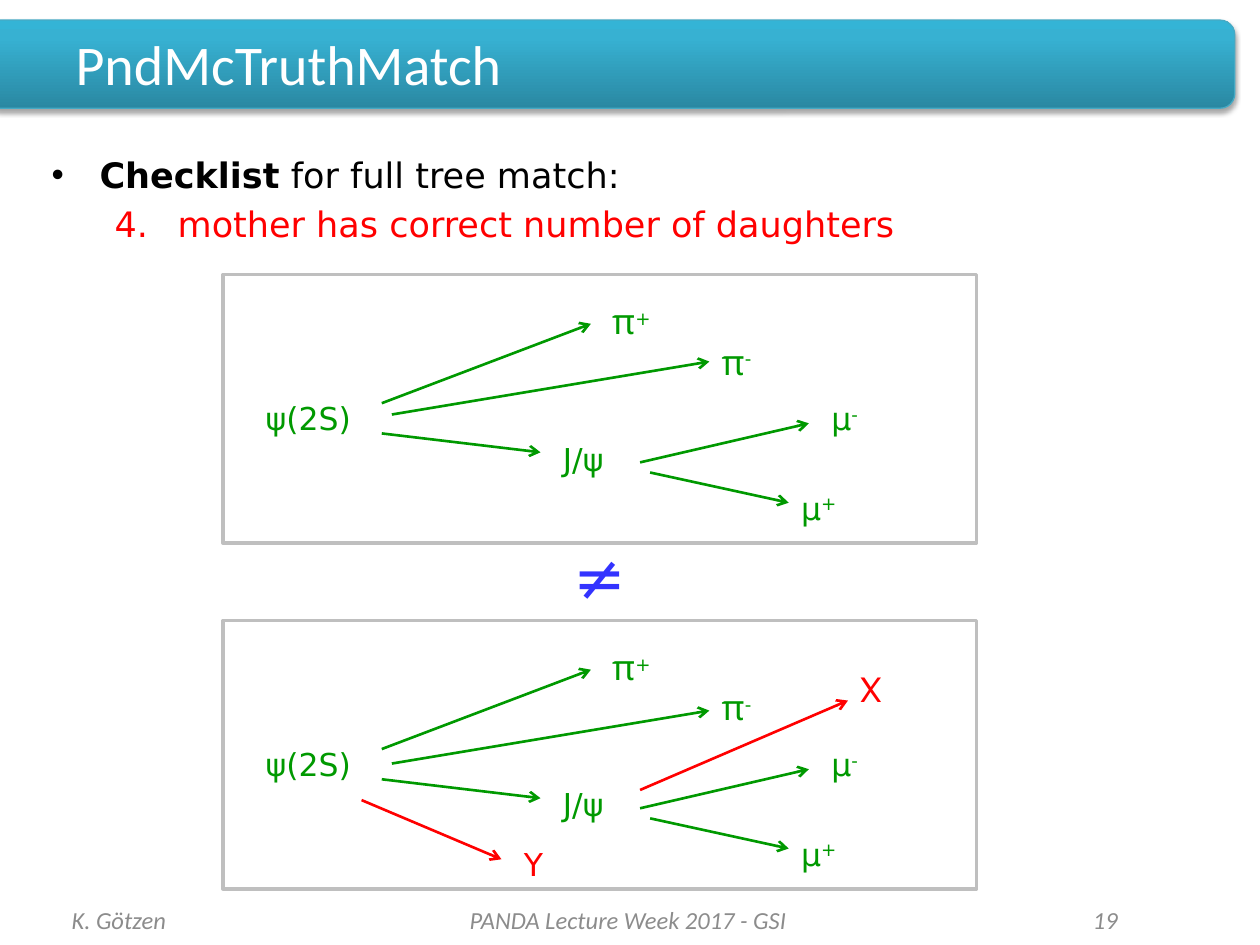
from lxml.etree import SubElement
from pptx import Presentation
from pptx.dml.color import RGBColor
from pptx.enum.shapes import MSO_CONNECTOR, MSO_SHAPE
from pptx.enum.text import MSO_ANCHOR, MSO_AUTO_SIZE, PP_ALIGN
from pptx.oxml import parse_xml
from pptx.oxml.ns import nsdecls, qn
from pptx.util import Inches, Pt

THEME = {
    "white": "FFFFFF", "black": "000000", "grey": "8C8C8C", "frame": "BFBFBF",
    "green": "009900", "red": "FF0000", "blue": "3333FF", "edge": "46AAC5",
    "fade": [(0, "2A88A2"), (80, "37B1D2"), (100, "34B4D6")],
    "title": {"size": Pt(32), "name": "Calibri"},
    "list": {"size": Pt(20), "name": "DejaVu Sans"},
    "foot": {"size": Pt(14), "name": "Calibri", "italic": True},
    "label": {"size": Pt(18), "name": "DejaVu Sans"},
    "large": {"size": Pt(20), "name": "Cabin"},
    "sign": {"size": Pt(36), "name": "DejaVu Sans"},
}


def write(par, text, style, color, **more):
    """Add a run in a theme style and return it."""
    run = par.add_run()
    run.text = text
    for key, value in {**THEME[style], **more}.items():
        setattr(run.font, key, value)
    run.font.color.rgb = RGBColor.from_string(THEME[color])
    return run


def label(x, y, wide, high, text, style, color, power=""):
    """Place a text box that fits its text, with an optional superscript."""
    box = slide.shapes.add_textbox(Inches(x), Inches(y), Inches(wide), Inches(high))
    frame = box.text_frame
    frame.word_wrap = False
    frame.auto_size = MSO_AUTO_SIZE.SHAPE_TO_FIT_TEXT
    par = frame.paragraphs[0]
    write(par, text, style, color)
    if power:
        run = write(par, power, "label", color)
        run.font._element.set("baseline", "30000")


deck = Presentation()
deck.slide_width, deck.slide_height = Inches(10), Inches(7.5)
slide = deck.slides.add_slide(deck.slide_layouts[1])
shapes = slide.shapes
title, body = shapes.title, slide.placeholders[1]

# Banner behind the title
banner = shapes.add_shape(MSO_SHAPE.ROUNDED_RECTANGLE, Inches(-0.12), Inches(0.16),
                          Inches(9.92), Inches(0.7))
banner.line.color.rgb = RGBColor.from_string(THEME["edge"])
banner.line.width = Pt(0.75)
stops = "".join(f'<a:gs pos="{pos * 1000}"><a:srgbClr val="{color}"/></a:gs>'
                for pos, color in THEME["fade"])
props = banner._element.spPr
props.find(qn("a:ln")).addprevious(parse_xml(
    f'<a:gradFill {nsdecls("a")}><a:gsLst>{stops}</a:gsLst>'
    '<a:lin ang="16200000" scaled="0"/></a:gradFill>'))
props.append(parse_xml(
    f'<a:effectLst {nsdecls("a")}><a:outerShdw blurRad="{Pt(3.1)}" dist="{Pt(1.8)}" '
    'dir="5400000" rotWithShape="0"><a:srgbClr val="000000"><a:alpha val="35000"/>'
    '</a:srgbClr></a:outerShdw></a:effectLst>'))
title._element.addprevious(banner._element)

# Title and checklist
for holder, place in ((title, (0.5, 0.18, 9, 0.64)), (body, (0.31, 1.17, 9.38, 5.78))):
    for side, value in zip(("left", "top", "width", "height"), place):
        setattr(holder, side, Inches(value))
title.text_frame.vertical_anchor = MSO_ANCHOR.MIDDLE
head = title.text_frame.paragraphs[0]
head.alignment = PP_ALIGN.LEFT
write(head, "PndMcTruthMatch", "title", "white")

first = body.text_frame.paragraphs[0]
write(first, "Checklist", "list", "black", bold=True)
write(first, " for full tree match:", "list", "black")
item = body.text_frame.add_paragraph()
item.level = 1
write(item, "mother has correct number of daughters", "list", "red")
for par, left, hang, tag, marks in (
        (first, 0.38, 0.38, "a:buChar", {"char": "•"}),
        (item, 1, 0.5, "a:buAutoNum", {"type": "arabicPeriod", "startAt": "4"})):
    props = par._p.get_or_add_pPr()
    props.set("marL", str(Inches(left)))
    props.set("indent", str(-Inches(hang)))
    SubElement(props, qn(tag), marks)

# Decay trees: the lower one repeats the upper one and adds X and Y
STEP = 2.745
labels = [
    (2.01, 3.12, 0.97, 0.4, "ψ(2S)", "label", "green"),
    (4.76, 2.33, 0.52, 0.44, "π", "large", "green", "+"),
    (5.63, 2.65, 0.46, 0.44, "π", "large", "green", "-"),
    (4.37, 3.44, 0.64, 0.4, "J/ψ", "label", "green"),
    (6.5, 3.12, 0.44, 0.4, "μ", "label", "green", "-"),
    (6.26, 3.83, 0.5, 0.4, "μ", "label", "green", "+"),
]
arrows = [
    (3.03, 3.2, 4.69, 2.57),
    (3.03, 3.44, 4.29, 3.59),
    (5.08, 3.67, 6.42, 3.36),
    (5.16, 3.75, 6.26, 3.99),
]
lines = [(x, y + drop, end, stop + drop, "green")
         for drop in (0, STEP) for x, y, end, stop in arrows]
lines += [
    (3.11, 3.29, 5.63, 2.87, "green"),
    (3.11, 6.06, 5.63, 5.64, "green"),
    (5.08, 6.27, 6.73, 5.56, "red"),
    (2.87, 6.35, 3.98, 6.82, "red"),
]

for drop in (0, STEP):
    frame = shapes.add_shape(MSO_SHAPE.RECTANGLE, Inches(1.77), Inches(2.18 + drop),
                             Inches(5.98), Inches(2.13))
    frame.fill.background()
    frame.line.color.rgb = RGBColor.from_string(THEME["frame"])
    frame.line.width = Pt(2)
    frame.shadow.inherit = False
    for x, y, *rest in labels:
        label(x, y + drop, *rest)

for *ends, color in lines:
    arrow = shapes.add_connector(MSO_CONNECTOR.STRAIGHT, *map(Inches, ends))
    arrow.line.color.rgb = RGBColor.from_string(THEME[color])
    arrow.line.width = Pt(1.5)
    SubElement(arrow.line._get_or_add_ln(), qn("a:tailEnd"), type="arrow")
    SubElement(arrow._element.spPr, qn("a:effectLst"))

label(4.45, 4.22, 0.62, 0.71, "≠", "sign", "blue")
label(6.73, 5.25, 0.39, 0.44, "X", "large", "red")
label(4.06, 6.66, 0.36, 0.4, "Y", "label", "red")

# Footer
for x, wide, text, align in (
        (0.47, 2.33, "K. Götzen", PP_ALIGN.LEFT),
        (3.03, 3.91, "PANDA Lecture Week 2017 - GSI", PP_ALIGN.CENTER),
        (7.5, 1.47, "19", PP_ALIGN.RIGHT)):
    box = shapes.add_textbox(Inches(x), Inches(7.1), Inches(wide), Inches(0.4))
    box.text_frame.word_wrap = True
    box.text_frame.vertical_anchor = MSO_ANCHOR.MIDDLE
    par = box.text_frame.paragraphs[0]
    par.alignment = align
    write(par, text, "foot", "grey")

deck.save("out.pptx")
